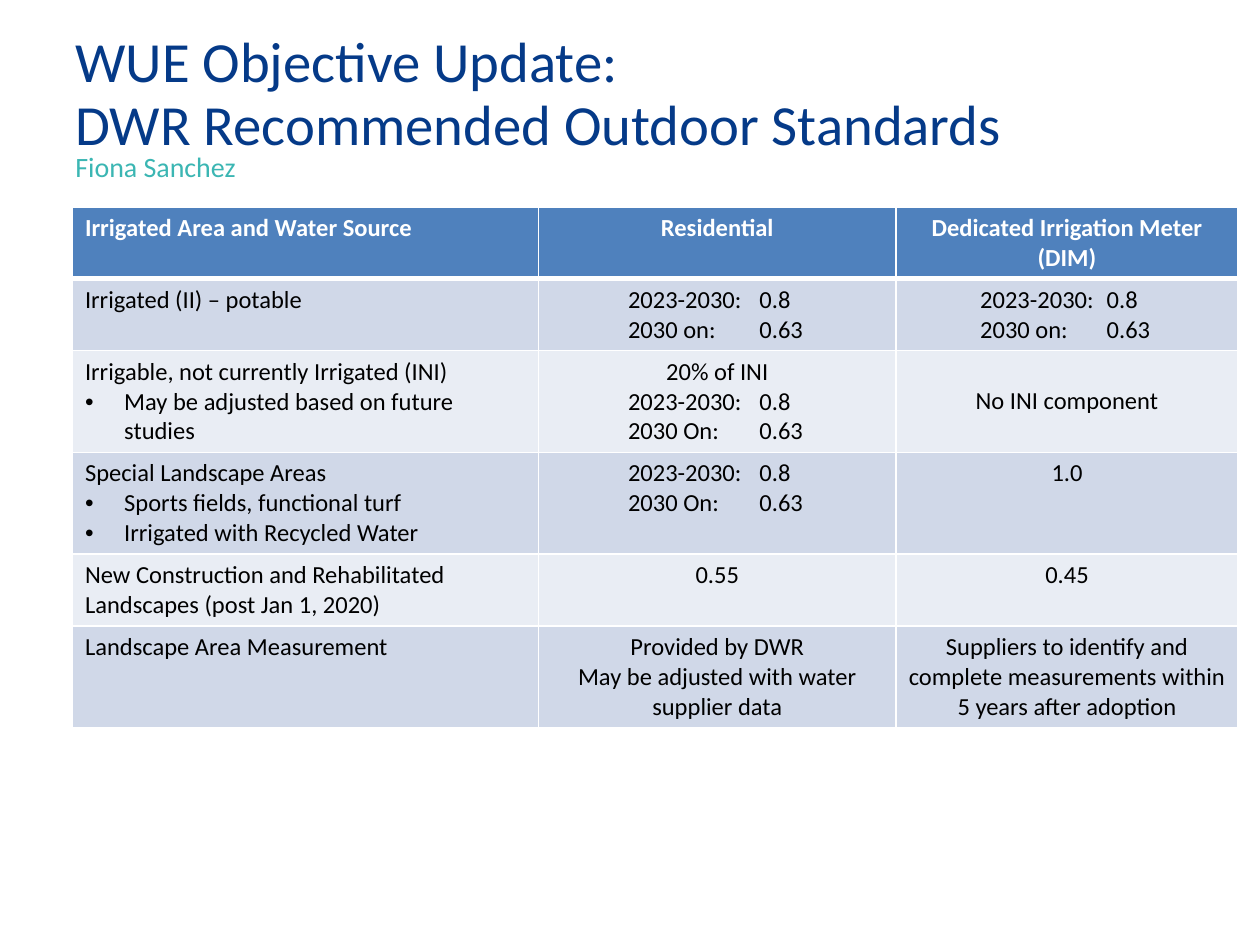
from lxml import etree
from pptx import Presentation
from pptx.dml.color import RGBColor
from pptx.enum.text import MSO_ANCHOR, PP_ALIGN
from pptx.oxml.ns import qn
from pptx.util import Cm, Pt

LEFT, CENTER = PP_ALIGN.LEFT, PP_ALIGN.CENTER
TOP, MIDDLE, BOTTOM = MSO_ANCHOR.TOP, MSO_ANCHOR.MIDDLE, MSO_ANCHOR.BOTTOM

NAVY = RGBColor(0x05, 0x3A, 0x88)
TEAL = RGBColor(0x3B, 0xB6, 0xB3)
HEADER_BLUE = RGBColor(0x4F, 0x81, 0xBD)
BANDS = (RGBColor(0xD0, 0xD8, 0xE8), RGBColor(0xE9, 0xED, 0xF4))
BLACK = RGBColor(0, 0, 0)
WHITE = RGBColor(0xFF, 0xFF, 0xFF)

TITLE_FORMAT = {"name": "Calibri", "size": Pt(32.4), "color": NAVY}
PRESENTER_FORMAT = {"name": "Calibri", "size": Pt(16), "color": TEAL}
HEADER_FORMAT = {"name": "Calibri", "size": Pt(14), "bold": True, "color": WHITE}
BODY_FORMAT = {"name": "Calibri", "size": Pt(14), "bold": False, "color": BLACK}

COLUMN_WIDTHS = (Cm(9.4), Cm(7.2), Cm(6.9))
# Side margin and tab stop of the period/value pairs, by column
PAIR_LAYOUT = {1: (Cm(1.8), Cm(2.65)), 2: (Cm(1.7), Cm(2.55))}
BULLET = "•"
BULLET_INDENT = Cm(0.79)

# Each row: number of text lines, then its cells as lists of paragraphs
ROWS = [
    (2, ["Irrigated Area and Water Source"], ["Residential"],
     ["Dedicated Irrigation Meter (DIM)"]),
    (2, ["Irrigated (II) – potable"],
     ["2023-2030:\t0.8", "2030 on:\t0.63"],
     ["2023-2030:\t0.8", "2030 on:\t0.63"]),
    (3, ["Irrigable, not currently Irrigated (INI)",
         "•May be adjusted based on future studies"],
     ["20% of INI", "2023-2030:\t0.8", "2030 On:\t0.63"],
     ["No INI component"]),
    (3, ["Special Landscape Areas", "•Sports fields, functional turf",
         "•Irrigated with Recycled Water"],
     ["2023-2030:\t0.8", "2030 On:\t0.63"], ["1.0"]),
    (2, ["New Construction and Rehabilitated Landscapes (post Jan 1, 2020)"],
     ["0.55"], ["0.45"]),
    (3, ["Landscape Area Measurement"],
     ["Provided by DWR", "May be adjusted with water supplier data"],
     ["Suppliers to identify and complete measurements within "
      "5 years after adoption"]),
]


def format_font(font, values):
    for name, value in values.items():
        if name == "color":
            font.color.rgb = value
        else:
            setattr(font, name, value)


def add_text(slide, box, lines, values, anchor=TOP, line_spacing=None):
    frame = slide.shapes.add_textbox(*box).text_frame
    frame.word_wrap = True
    frame.vertical_anchor = anchor
    paragraph = frame.paragraphs[0]
    paragraph.line_spacing = line_spacing
    for index, line in enumerate(lines):
        if index:
            paragraph.add_line_break()
        run = paragraph.add_run()
        run.text = line
        format_font(run.font, values)


def add_bullet(paragraph):
    properties = paragraph._p.get_or_add_pPr()
    properties.set("marL", str(BULLET_INDENT))
    properties.set("indent", str(-BULLET_INDENT))
    etree.SubElement(properties, qn("a:buFont"), typeface="Arial")
    etree.SubElement(properties, qn("a:buChar"), char=BULLET)


def add_tab_stop(paragraph, position):
    tabs = etree.SubElement(paragraph._p.get_or_add_pPr(), qn("a:tabLst"))
    etree.SubElement(tabs, qn("a:tab"), pos=str(position), algn="l")


def add_borders(cell, bottom_width):
    properties = cell._tc.get_or_add_tcPr()
    for side, width in (("L", 1), ("R", 1), ("T", 1), ("B", bottom_width)):
        line = etree.SubElement(properties, qn(f"a:ln{side}"), w=str(Pt(width)))
        fill = etree.SubElement(line, qn("a:solidFill"))
        etree.SubElement(fill, qn("a:srgbClr"), val=str(WHITE))


def fill_cell(cell, texts, column, values):
    frame = cell.text_frame
    if any("\t" in text for text in texts):
        cell.margin_left = cell.margin_right = PAIR_LAYOUT[column][0]
    for index, text in enumerate(texts):
        paragraph = frame.add_paragraph() if index else frame.paragraphs[0]
        if text.startswith(BULLET):
            add_bullet(paragraph)
        if "\t" in text:
            add_tab_stop(paragraph, PAIR_LAYOUT[column][1])
        paragraph.alignment = CENTER if column and "\t" not in text else LEFT
        run = paragraph.add_run()
        run.text = text.removeprefix(BULLET)
        format_font(run.font, values)


def add_standards_table(slide, left, top):
    heights = [Cm(0.6 * row[0] + 0.25) for row in ROWS]
    table = slide.shapes.add_table(
        len(ROWS), len(COLUMN_WIDTHS), left, top,
        sum(COLUMN_WIDTHS), sum(heights)).table
    for column, width in zip(table.columns, COLUMN_WIDTHS):
        column.width = width
    for row_index, (_, *cells) in enumerate(ROWS):
        table.rows[row_index].height = heights[row_index]
        is_header = row_index == 0
        for column_index, texts in enumerate(cells):
            cell = table.cell(row_index, column_index)
            fill_cell(cell, texts, column_index,
                      HEADER_FORMAT if is_header else BODY_FORMAT)
            add_borders(cell, 3 if is_header else 1)
            cell.fill.solid()
            cell.fill.fore_color.rgb = (
                HEADER_BLUE if is_header else BANDS[(row_index - 1) % 2])
            if texts == ["No INI component"]:
                cell.vertical_anchor = MIDDLE


def add_heading(slide, left, top, width):
    add_text(slide, (left, top, width, Cm(2.7)),
             ["WUE Objective Update:", "DWR Recommended Outdoor Standards"],
             TITLE_FORMAT, BOTTOM, Pt(36))
    add_text(slide, (left, top + Cm(2.31), width, Cm(0.89)),
             ["Fiona Sanchez"], PRESENTER_FORMAT)


def main():
    presentation = Presentation()
    presentation.slide_width = Cm(25.4)
    presentation.slide_height = Cm(19.05)
    slide = presentation.slides.add_slide(presentation.slide_layouts[6])
    add_heading(slide, Cm(1.27), Cm(0.58), Cm(22.86))
    add_standards_table(slide, Cm(1.46), Cm(4.17))
    presentation.save("out.pptx")


if __name__ == "__main__":
    main()
